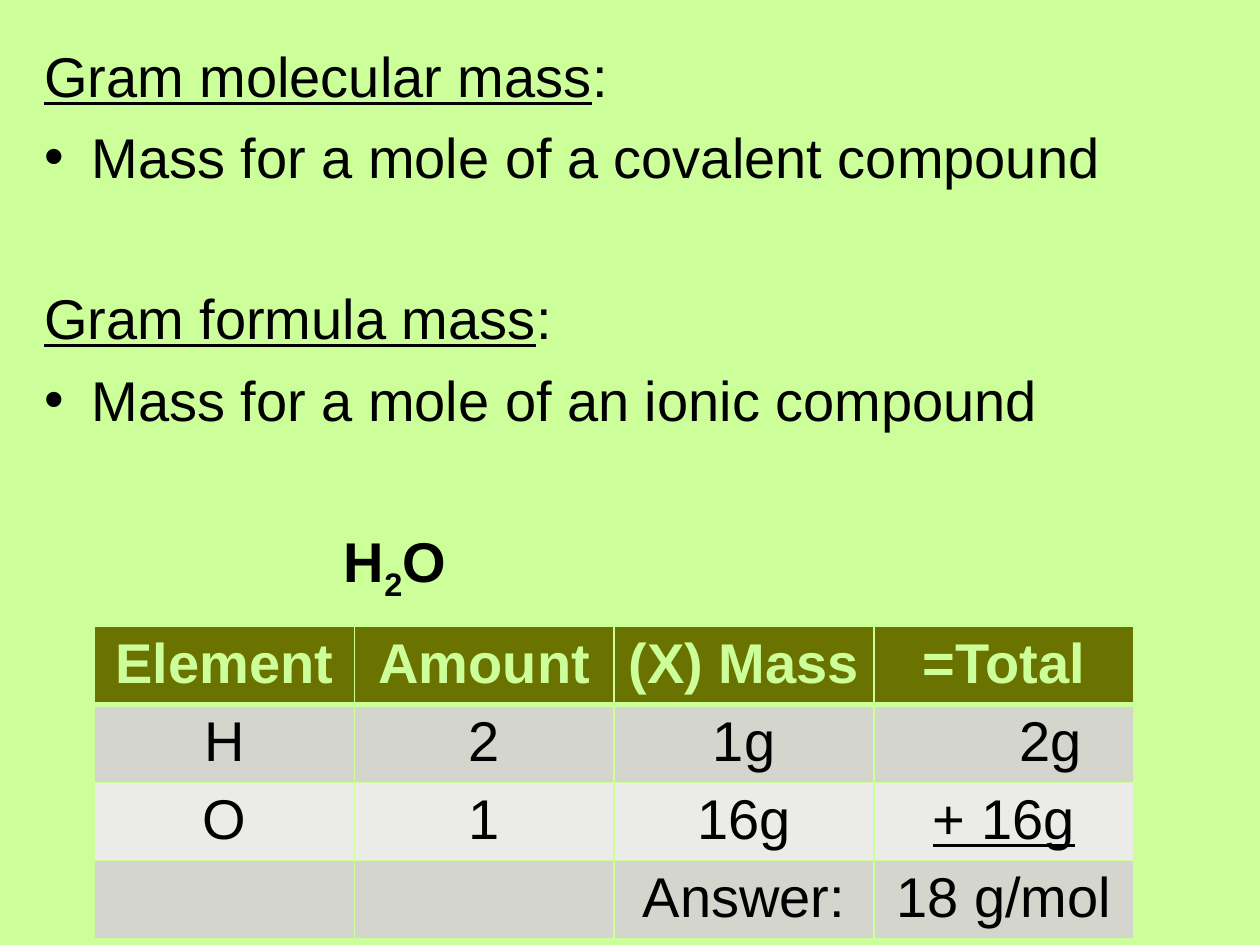
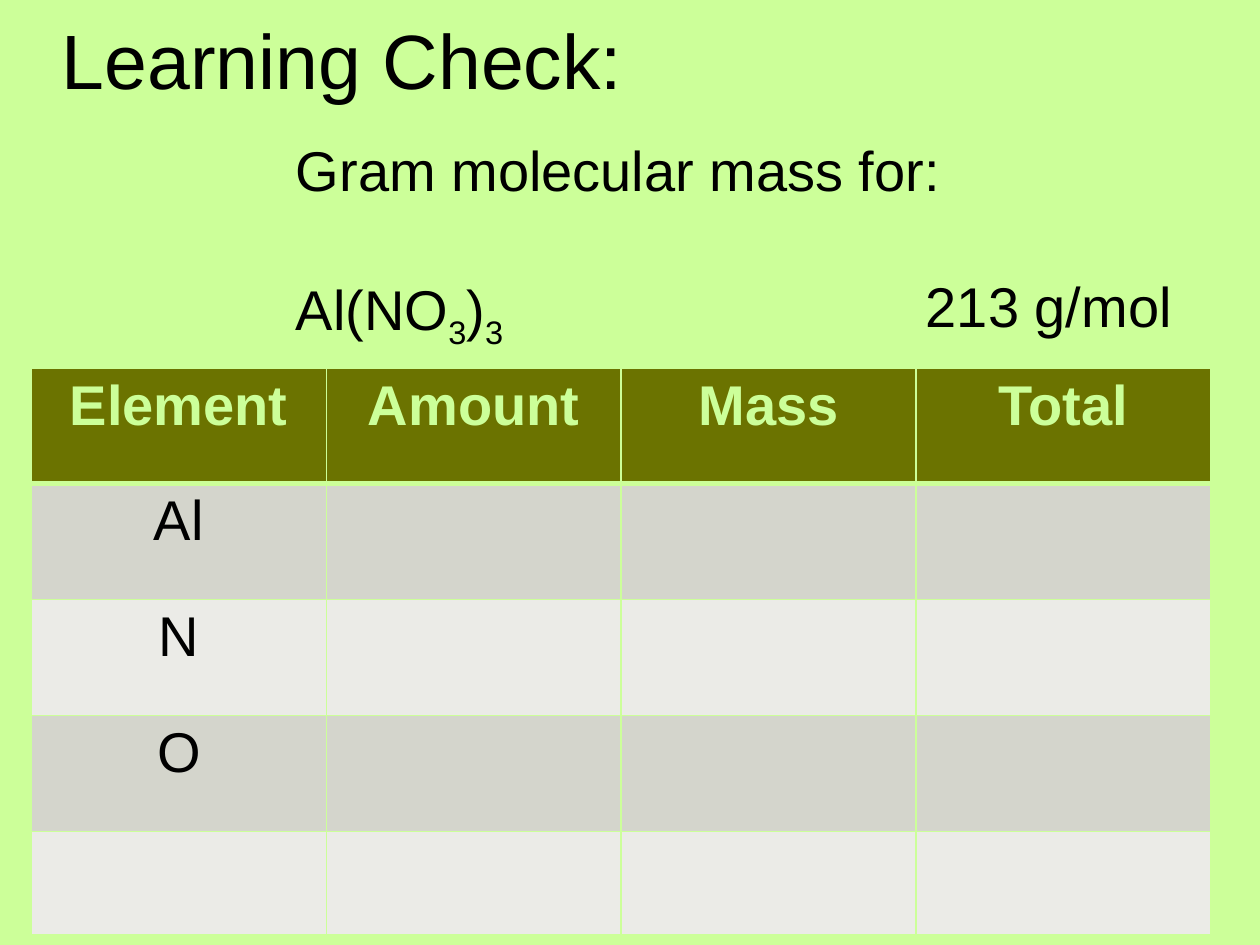
"""Build two slides on gram molecular mass: definitions with an example, and a learning check."""
from pptx import Presentation
from pptx import util as u
from pptx.dml.color import RGBColor
from pptx.enum import text
from pptx.oxml import parse_xml
from pptx.oxml.ns import nsdecls

LIME = RGBColor(0xCC, 0xFF, 0x99)
OLIVE = RGBColor(0x6B, 0x73, 0x00)
BANDS = RGBColor(0xD4, 0xD5, 0xCC), RGBColor(0xEB, 0xEB, 0xE7)
BLACK = RGBColor(0, 0, 0)
FONT, BODY_SIZE, TITLE_SIZE = "Arial", 32, 44
LINE_SPACING = 1.05
LINE = 38.6
GAP = 6.4
BLANK_GAP = LINE + 2 * GAP

DEFINITIONS = [
    {"runs": [("Gram molecular mass", "u"), (":", "")], "indent": 0},
    {"runs": [("Mass for a mole of a covalent compound", "")], "before": GAP},
    {"runs": [("Gram formula mass", "u"), (":", "")], "indent": 0, "before": BLANK_GAP},
    {"runs": [("Mass for a mole of an ionic compound", "")], "before": GAP},
    {"runs": [("H", "b"), ("2", "b sub"), ("O", "b")], "indent": 2.38, "before": BLANK_GAP},
]
WATER = {
    "place": (0.75, 4.97, 8.25),
    "row_heights": [0.62] * 4,
    "rows": [
        ["Element", "Amount", "(X) Mass", "=Total"],
        ["H", "2", "1g", "2g"],
        ["O", "1", "16g", "+ 16g"],
        ["", "", "Answer:", "18 g/mol"],
    ],
    "underlined": {(2, 3)},
    "left_margins": {(1, 3): 0.84},
}

CHECK_TITLE = "Learning Check:"
QUESTION = [
    {"runs": [("Gram molecular mass for:", "")]},
    {"runs": [("Al(NO", ""), ("3", "sub"), (")", ""), ("3", "sub")], "before": LINE},
]
ANSWER = [{"runs": [("213 g/mol", "")]}]
NITRATE = {
    "place": (0.25, 2.92, 9.36),
    "row_heights": [0.92] * 4 + [0.82],
    "rows": [
        ["Element", "Amount", "Mass", "Total"],
        ["Al", "", "", ""],
        ["N", "", "", ""],
        ["O", "", "", ""],
        [""] * 4,
    ],
}


def place(part, left, top, width, height):
    part.left, part.top = u.Inches(left), u.Inches(top)
    part.width, part.height = u.Inches(width), u.Inches(height)


def add_run(paragraph, words, style="", size=BODY_SIZE, color=BLACK):
    run = paragraph.add_run()
    run.text = words
    font = run.font
    font.name, font.size, font.color.rgb = FONT, u.Pt(size), color
    styles = style.split()
    font.bold, font.underline = "b" in styles, "u" in styles
    if "sub" in styles:
        run._r.get_or_add_rPr().set("baseline", "-25000")


def write(frame, paragraphs):
    frame.auto_size = text.MSO_AUTO_SIZE.NONE
    for number, content in enumerate(paragraphs):
        paragraph = frame.add_paragraph() if number else frame.paragraphs[0]
        if "indent" in content:
            properties = paragraph._p.get_or_add_pPr()
            properties.set("marL", str(u.Inches(content["indent"])))
            properties.set("indent", "0")
            properties.append(parse_xml(f"<a:buNone {nsdecls('a')}/>"))
        paragraph.line_spacing = LINE_SPACING
        paragraph.space_before = u.Pt(content.get("before", 0))
        for words, style in content["runs"]:
            add_run(paragraph, words, style)


def add_note(slide, box, paragraphs):
    frame = slide.shapes.add_textbox(*map(u.Inches, box)).text_frame
    frame.word_wrap = False
    write(frame, paragraphs)


def set_borders(cell, row):
    widths = {"L": 1, "R": 1, "T": 3 if row == 1 else 1, "B": 3 if row == 0 else 1}
    for position, (side, width) in enumerate(widths.items()):
        cell._tc.get_or_add_tcPr().insert(position, parse_xml(
            f'<a:ln{side} {nsdecls("a")} w="{u.Pt(width)}"><a:solidFill>'
            f'<a:srgbClr val="{LIME}"/></a:solidFill></a:ln{side}>'))


def add_mass_table(slide, content):
    rows, heights = content["rows"], content["row_heights"]
    left, top, width = content["place"]
    table = slide.shapes.add_table(
        len(rows), len(rows[0]),
        *map(u.Inches, (left, top, width, sum(heights)))).table
    for row, (words_in_row, height) in enumerate(zip(rows, heights)):
        table.rows[row].height = u.Inches(height)
        for column, words in enumerate(words_in_row):
            cell = table.cell(row, column)
            cell.fill.solid()
            cell.fill.fore_color.rgb = BANDS[(row - 1) % 2] if row else OLIVE
            set_borders(cell, row)
            spot = row, column
            if spot in content.get("left_margins", {}):
                cell.margin_left = u.Inches(content["left_margins"][spot])
            paragraph = cell.text_frame.paragraphs[0]
            paragraph.alignment = text.PP_ALIGN.CENTER
            if words:
                style = "u" if spot in content.get("underlined", ()) else ""
                add_run(paragraph, words, style if row else "b",
                        color=BLACK if row else LIME)


def build_definitions(prs):
    slide = prs.slides.add_slide(prs.slide_layouts[1])
    title, body = slide.placeholders
    title._element.getparent().remove(title._element)
    place(body, 0.25, 0.25, 9.61, 6.45)
    write(body.text_frame, DEFINITIONS)
    add_mass_table(slide, WATER)


def build_learning_check(prs):
    slide = prs.slides.add_slide(prs.slide_layouts[5])
    title = slide.shapes.title
    place(title, 0.39, 0, 9.61, 0.88)
    frame = title.text_frame
    frame.auto_size = text.MSO_AUTO_SIZE.NONE
    frame.vertical_anchor = text.MSO_ANCHOR.BOTTOM
    frame.paragraphs[0].alignment = text.PP_ALIGN.LEFT
    add_run(frame.paragraphs[0], CHECK_TITLE, size=TITLE_SIZE)
    add_mass_table(slide, NITRATE)
    add_note(slide, (2.25, 1, 5.36, 1.72), QUESTION)
    add_note(slide, (7.25, 2.08, 2.17, 0.64), ANSWER)


def main():
    prs = Presentation()
    prs.slide_width, prs.slide_height = u.Inches(10), u.Inches(7.5)
    background = prs.slide_master.background.fill
    background.solid()
    background.fore_color.rgb = LIME
    build_definitions(prs)
    build_learning_check(prs)
    prs.save("out.pptx")


if __name__ == "__main__":
    main()
